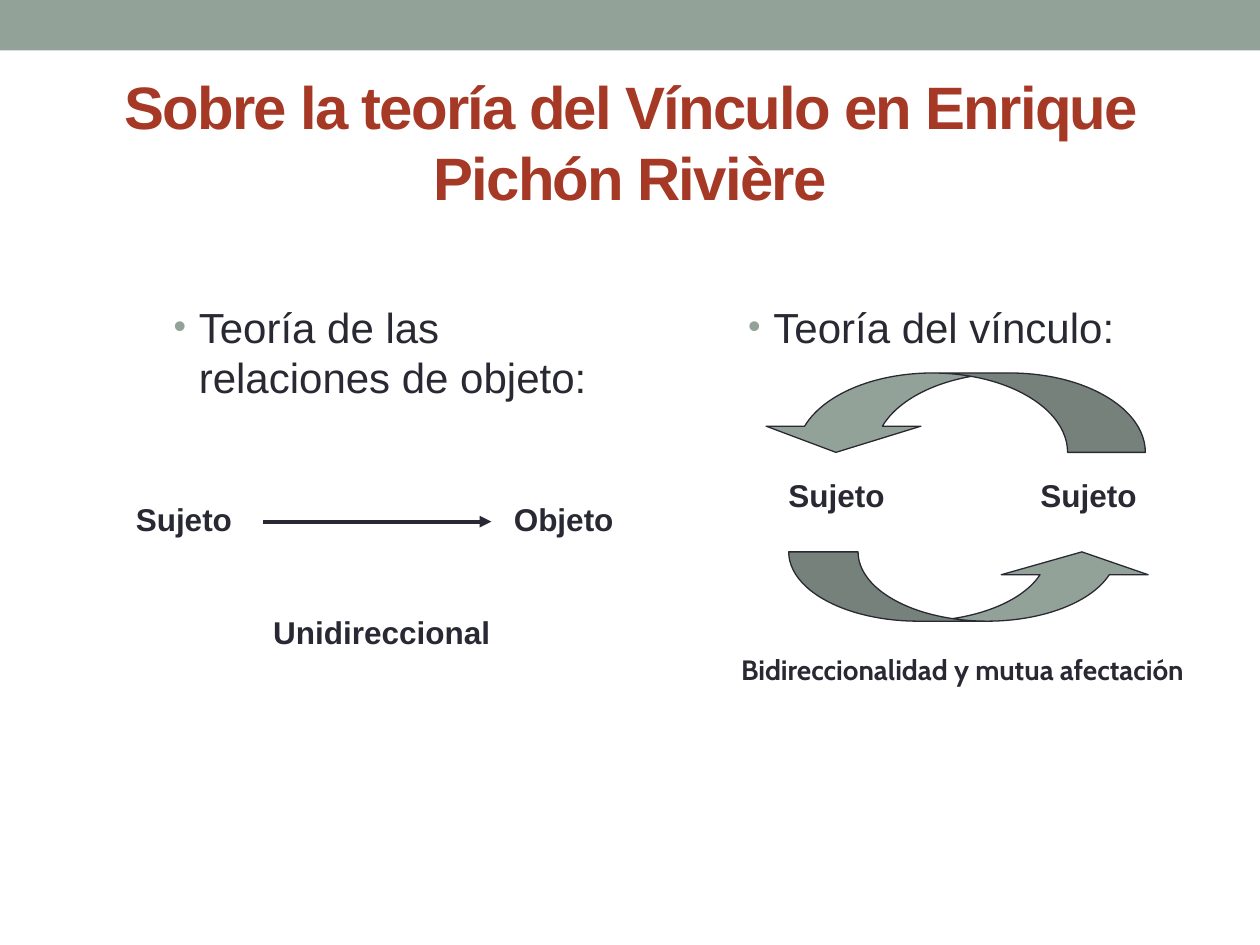
from lxml import etree
from pptx import Presentation
from pptx.dml.color import RGBColor
from pptx.enum.shapes import MSO_CONNECTOR, MSO_SHAPE
from pptx.enum.text import MSO_ANCHOR, PP_ALIGN
from pptx.oxml.ns import qn
from pptx.util import Inches, Pt

SAGE, INK, RUST, WHITE = "93A299", "292934", "A53926", "FFFFFF"


def color(value):
    return RGBColor.from_string(value)


def inches(box):
    return [Inches(value) for value in box]


def set_font(paragraph, size, bold=False, name="Arial", fill=INK):
    font = paragraph.font
    font.name, font.size, font.bold = name, Pt(size), bold
    font.color.rgb = color(fill)


def add_paragraph_settings(paragraph, elements):
    defaults = paragraph._p.get_or_add_pPr().find(qn("a:defRPr"))
    for element in elements:
        defaults.addprevious(element)


def add_filled_shape(slide, kind, box, fill, outline=None):
    shape = slide.shapes.add_shape(kind, *inches(box))
    shape.shadow.inherit = False
    shape.fill.solid()
    shape.fill.fore_color.rgb = color(fill)
    if outline:
        shape.line.color.rgb = color(outline)
        shape.line.width = Pt(0.75)
    else:
        shape.line.fill.background()
    return shape


def add_title(slide, box, text):
    title = slide.shapes.title
    title.left, title.top, title.width, title.height = inches(box)
    frame = title.text_frame
    frame.text = text
    frame.word_wrap = True
    frame.vertical_anchor = MSO_ANCHOR.MIDDLE
    paragraph = frame.paragraphs[0]
    paragraph.alignment = PP_ALIGN.CENTER
    set_font(paragraph, 34.2, True, fill=RUST)
    paragraph.runs[0].font._element.set("spc", "-100")


def add_bullet(slide, box, text):
    frame = slide.shapes.add_textbox(*inches(box)).text_frame
    frame.word_wrap = True
    frame.text = text
    paragraph = frame.paragraphs[0]
    set_font(paragraph, 24)
    properties = paragraph._p.get_or_add_pPr()
    properties.set("marL", str(Inches(0.2)))
    properties.set("indent", str(Inches(-0.2)))
    bullet_color = etree.Element(qn("a:buClr"))
    etree.SubElement(bullet_color, qn("a:srgbClr"), val=SAGE)
    add_paragraph_settings(paragraph, [
        bullet_color,
        etree.Element(qn("a:buSzPct"), val="85000"),
        etree.Element(qn("a:buFont"), typeface="Arial"),
        etree.Element(qn("a:buChar"), char="•"),
    ])


def add_panel(slide, box, top_margin, labels, tab_stops, caption, gap):
    frame = add_filled_shape(slide, MSO_SHAPE.RECTANGLE, box, WHITE).text_frame
    frame.word_wrap = True
    frame.vertical_anchor = MSO_ANCHOR.TOP
    frame.margin_top = Inches(top_margin)
    label_line = frame.paragraphs[0]
    label_line.text = labels
    label_line.alignment = PP_ALIGN.LEFT
    set_font(label_line, 18, True)
    tab_list = etree.Element(qn("a:tabLst"))
    for stop in tab_stops:
        etree.SubElement(tab_list, qn("a:tab"), pos=str(Inches(stop)), algn="l")
    add_paragraph_settings(label_line, [tab_list])
    caption_line = frame.add_paragraph()
    caption_line.text = caption
    caption_line.alignment = PP_ALIGN.CENTER
    caption_line.space_before = Pt(gap)
    set_font(caption_line, 18, True)
    return caption_line


def add_arrow(slide, left, right, top):
    arrow = slide.shapes.add_connector(
        MSO_CONNECTOR.STRAIGHT, *inches((left, top, right, top)))
    arrow.line.color.rgb = color(INK)
    arrow.line.width = Pt(2.25)
    etree.SubElement(arrow.line._get_or_add_ln(), qn("a:tailEnd"), type="triangle")
    etree.SubElement(arrow._element.spPr, qn("a:effectLst"))


def add_curved_arrow(slide, box, adjustments, rotation=0):
    arrow = add_filled_shape(slide, MSO_SHAPE.CURVED_UP_ARROW, box, SAGE, INK)
    arrow.rotation = rotation
    for index, value in enumerate(adjustments):
        arrow.adjustments[index] = value


def add_object_theory(slide, left, top):
    add_panel(slide, (left - 0.3, top + 0.78, 4.1, 2.29), 0.85,
              "Sujeto\tObjeto", [3], "Unidireccional", 43)
    add_bullet(slide, (left, top, 3.5, 4.12), "Teoría de las relaciones de objeto:")
    add_arrow(slide, left + 0.81, left + 2.62, top + 1.8)


def add_bond_theory(slide, left, top):
    caption = add_panel(slide, (left - 0.13, top + 0.39, 3.86, 3.31), 1.05,
                        "\tSujeto\tSujeto", [0.45, 2.45],
                        "Bidireccionalidad y mutua afectación", 79)
    set_font(caption, 16, True, "Cabin")
    add_bullet(slide, (left, top, 3.5, 4.12), "Teoría del vínculo:")
    add_curved_arrow(slide, (left + 0.42, top + 2.04, 2.91, 0.55), (1.06, 2.12, 0.33))
    add_curved_arrow(slide, (left + 0.18, top + 0.62, 3.07, 0.63), (0.98, 1.95, 0.33), 180)


def main():
    presentation = Presentation()
    presentation.slide_width, presentation.slide_height = Inches(10), Inches(7.5)
    slide = presentation.slides.add_slide(presentation.slide_layouts[5])
    add_filled_shape(slide, MSO_SHAPE.RECTANGLE, (0, 0, 10, 0.4), SAGE)
    add_title(slide, (0.5, 0.58, 9, 1.08),
              "Sobre la teoría del Vínculo en Enrique Pichón Rivière")
    add_object_theory(slide, 1.28, 2.34)
    add_bond_theory(slide, 5.84, 2.34)
    presentation.save("out.pptx")


if __name__ == "__main__":
    main()
